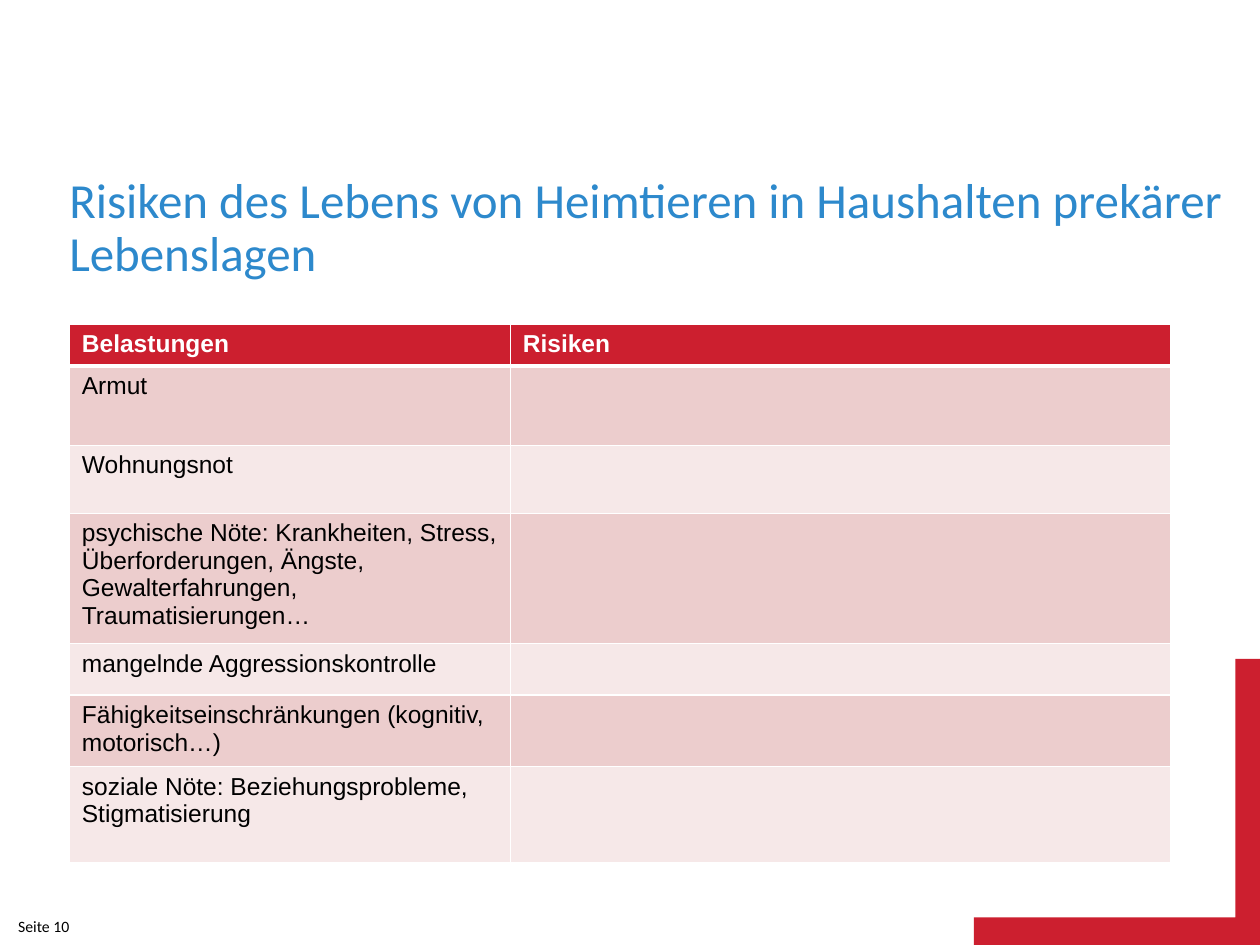
from lxml import etree
from pptx import Presentation
from pptx.dml.color import RGBColor
from pptx.enum.shapes import MSO_SHAPE
from pptx.enum.text import MSO_ANCHOR, PP_ALIGN
from pptx.oxml.ns import qn
from pptx.util import Inches, Pt

CORNER = MSO_SHAPE.CORNER
BOTTOM = MSO_ANCHOR.BOTTOM
LEFT, RIGHT = PP_ALIGN.LEFT, PP_ALIGN.RIGHT

TITLE = "Risiken des Lebens von Heimtieren in Haushalten prekärer Lebenslagen"
PAGE = "Seite 10"
HEADS = ("Belastungen", "Risiken")
HEAD_H = 0.32
ROWS = [  # burden, row height
    ("Armut", 0.63),
    ("Wohnungsnot", 0.54),
    ("psychische Nöte: Krankheiten, Stress, Überforderungen, Ängste, "
     "Gewalterfahrungen, Traumatisierungen…", 0.97),
    ("mangelnde Aggressionskontrolle", 0.41),
    ("Fähigkeitseinschränkungen (kognitiv, motorisch…)", 0.53),
    ("soziale Nöte: Beziehungsprobleme, Stigmatisierung", 0.76),
]
COLS = (3.5, 5.24)

THEME = {
    "red": "CC1F2F", "blue": "2D89CC", "black": "000000", "white": "FFFFFF",
    "bands": ("ECCDCD", "F6E8E8"),
    "head": "Calibri", "body": "Arial",
    "title": 28, "cell": 14, "page": 9,
}


def paint(item, color):
    item.fill.solid()
    item.fill.fore_color.rgb = RGBColor.from_string(color)


def write(frame, text, size, font, color, bold=False, align=LEFT, line=None):
    para = frame.paragraphs[0]
    para.alignment = align
    if line:
        para.line_spacing = line
    run = para.add_run()
    run.text = text
    run.font.size = Pt(size)
    run.font.name = font
    run.font.bold = bold
    run.font.color.rgb = RGBColor.from_string(color)


def add_box(slide, area, wrap):
    """Add a bottom-anchored text box without margins; return its frame."""
    frame = slide.shapes.add_textbox(*map(Inches, area)).text_frame
    frame.margin_left = frame.margin_right = 0
    frame.margin_top = frame.margin_bottom = 0
    frame.vertical_anchor = BOTTOM
    frame.word_wrap = wrap
    return frame


def edge(cell, widths):
    """Draw white borders; widths maps L, R, T, B to points."""
    props = cell._tc.get_or_add_tcPr()
    for spot, (side, width) in enumerate(widths.items()):
        line = etree.Element(qn(f"a:ln{side}"), w=str(Pt(width)))
        fill = etree.SubElement(line, qn("a:solidFill"))
        etree.SubElement(fill, qn("a:srgbClr"), val=THEME["white"])
        props.insert(spot, line)


def add_corner(slide):
    shape = slide.shapes.add_shape(
        CORNER, *map(Inches, (7.73, 5.23, 2.28, 2.28)))
    shape.shadow.inherit = False
    shape.adjustments[0] = 0.1
    shape.adjustments[1] = 0.09
    shape._element.spPr.xfrm.set("flipH", "1")
    paint(shape, THEME["red"])
    shape.line.fill.background()


def add_grid(slide):
    rows = [(HEADS, HEAD_H)] + [((name, ""), high) for name, high in ROWS]
    total = sum(high for _, high in rows)
    table = slide.shapes.add_table(
        len(rows), len(COLS), Inches(0.55), Inches(2.57),
        Inches(sum(COLS)), Inches(total)).table
    for col, wide in zip(table.columns, COLS):
        col.width = Inches(wide)
    for r, (texts, high) in enumerate(rows):
        table.rows[r].height = Inches(high)
        head = r == 0
        back = THEME["red"] if head else THEME["bands"][(r - 1) % 2]
        ink = THEME["white"] if head else THEME["black"]
        for c, text in enumerate(texts):
            cell = table.cell(r, c)
            paint(cell, back)
            edge(cell, {"L": 1, "R": 1, "T": 3 if r == 1 else 1,
                        "B": 3 if head else 1})
            if text:
                write(cell.text_frame, text, THEME["cell"], THEME["body"],
                      ink, bold=head)


def main():
    deck = Presentation()
    deck.slide_width, deck.slide_height = Inches(10), Inches(7.5)
    slide = deck.slides.add_slide(deck.slide_layouts[6])
    add_corner(slide)
    write(add_box(slide, (0.55, 1.16, 9.33, 1.08), True), TITLE,
          THEME["title"], THEME["head"], THEME["blue"], line=0.9)
    write(add_box(slide, (0, 7.28, 0.55, 0.15), False), PAGE,
          THEME["page"], THEME["head"], THEME["black"], align=RIGHT)
    add_grid(slide)
    deck.save("out.pptx")


if __name__ == "__main__":
    main()
